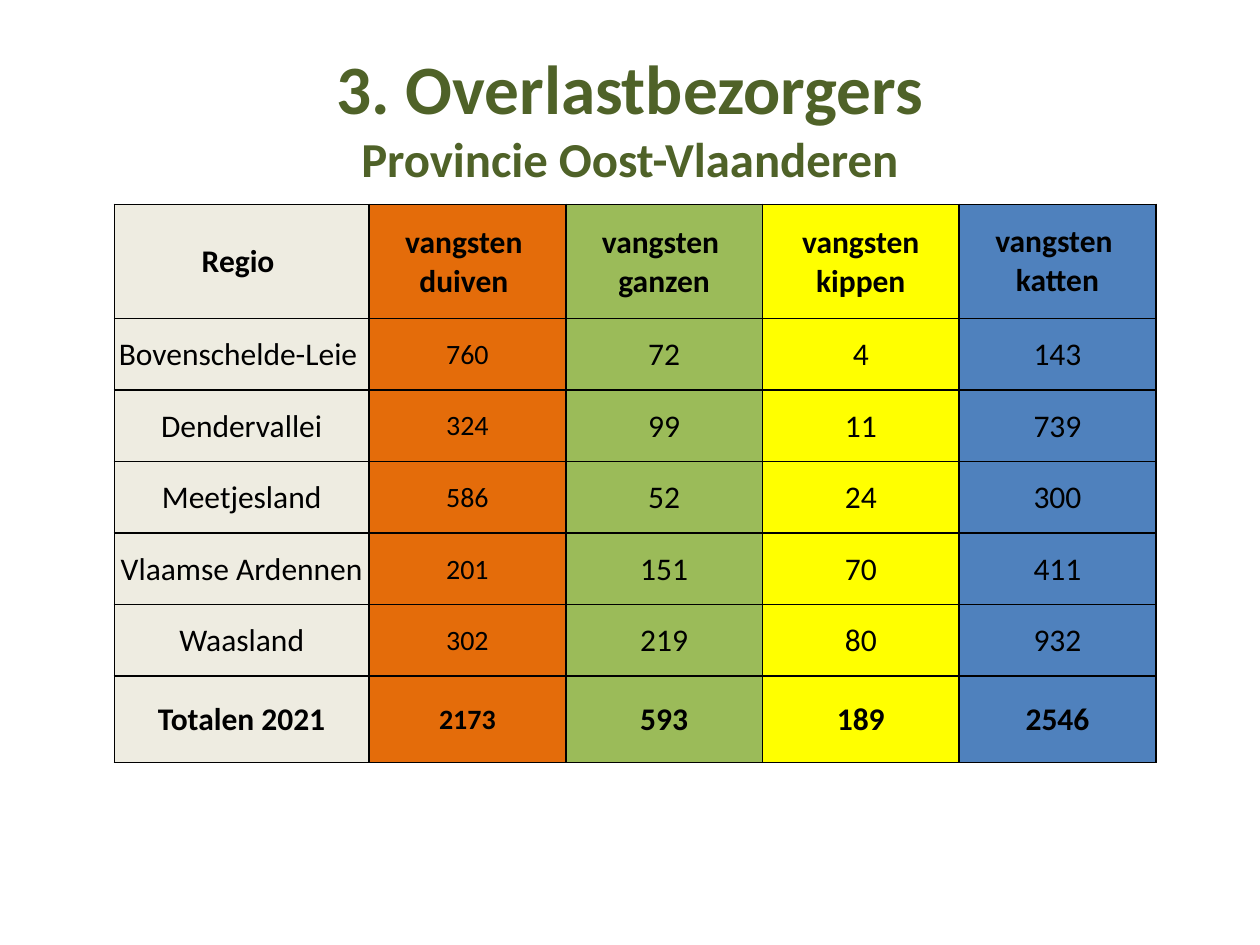
from lxml import etree
from pptx import Presentation
from pptx.dml.color import RGBColor
from pptx.enum import text
from pptx.oxml import ns
from pptx.util import Pt

FONT = "Calibri"
COLORS = {
    "title": "4F6228",
    "ink": "000000",
    "regio": "EEECE1",
    "duiven": "E46C0A",
    "ganzen": "9BBB59",
    "kippen": "FFFF00",
    "katten": "4F81BD",
}
COLUMNS = ["regio", "duiven", "ganzen", "kippen", "katten"]
ROWS = [
    ["Regio ", "vangsten \nduiven ", "vangsten \nganzen", "vangsten\nkippen", "vangsten \nkatten"],
    ["Bovenschelde-Leie ", "760", "72", "4", "143"],
    ["Dendervallei", "324", "99", "11", "739"],
    ["Meetjesland", "586", "52", "24", "300"],
    ["Vlaamse Ardennen", "201", "151", "70", "411"],
    ["Waasland", "302", "219", "80", "932"],
    ["Totalen 2021", "2173", "593", "189", "2546"],
]
COLUMN_WIDTHS = [145.6] + [112.4] * 4
ROW_HEIGHTS = [65.2] + [40.9] * 5 + [49.5]


def format_run(run, size, color, bold):
    run.font.name = FONT
    run.font.size = Pt(size)
    run.font.bold = bold
    run.font.color.rgb = RGBColor.from_string(COLORS[color])


def add_title(slide, left, top, width, height):
    shape = slide.shapes.add_textbox(Pt(left), Pt(top), Pt(width), Pt(height))
    frame = shape.text_frame
    frame.word_wrap = True
    frame.vertical_anchor = text.MSO_ANCHOR.MIDDLE
    frame.text = "3. Overlastbezorgers\vProvincie Oost-Vlaanderen"
    paragraph = frame.paragraphs[0]
    paragraph.alignment = text.PP_ALIGN.CENTER
    for run, size in zip(paragraph.runs, (39.6, 27.9)):
        format_run(run, size, "title", True)


def add_borders(cell, width):
    properties = cell._tc.get_or_add_tcPr()
    for side in ("lnL", "lnR", "lnT", "lnB"):
        line = etree.SubElement(properties, ns.qn(f"a:{side}"), w=str(Pt(width)))
        fill = etree.SubElement(line, ns.qn("a:solidFill"))
        etree.SubElement(fill, ns.qn("a:srgbClr"), val=COLORS["ink"])


def fill_cell(cell, words, color, size, bold, margins):
    add_borders(cell, 1)
    cell.fill.solid()
    cell.fill.fore_color.rgb = RGBColor.from_string(COLORS[color])
    cell.vertical_anchor = text.MSO_ANCHOR.MIDDLE
    side, top = margins
    cell.margin_left = cell.margin_right = Pt(side)
    cell.margin_top, cell.margin_bottom = Pt(top), Pt(0)
    cell.text_frame.text = words
    for paragraph in cell.text_frame.paragraphs:
        paragraph.alignment = text.PP_ALIGN.CENTER
        for run in paragraph.runs:
            format_run(run, size, "ink", bold)


def add_catch_table(slide, left, top):
    frame = slide.shapes.add_table(
        len(ROWS), len(COLUMNS), Pt(left), Pt(top),
        Pt(sum(COLUMN_WIDTHS)), Pt(sum(ROW_HEIGHTS)))
    table = frame.table
    for column, width in zip(table.columns, COLUMN_WIDTHS):
        column.width = Pt(width)
    for row, height in zip(table.rows, ROW_HEIGHTS):
        row.height = Pt(height)
    last = len(ROWS) - 1
    for r, values in enumerate(ROWS):
        for c, (name, words) in enumerate(zip(COLUMNS, values)):
            size = 16 if name == "duiven" and r > 0 else 18
            margins = (2.2, 0) if name == "katten" and r == 0 else (0.75, 0.75)
            fill_cell(table.cell(r, c), words, name, size, r in (0, last), margins)


def main():
    presentation = Presentation()
    presentation.slide_width, presentation.slide_height = Pt(720), Pt(540)
    slide = presentation.slides.add_slide(presentation.slide_layouts[6])
    add_title(slide, 36, 21.6, 648, 90)
    add_catch_table(slide, 65.3, 116.8)
    presentation.save("out.pptx")


if __name__ == "__main__":
    main()
